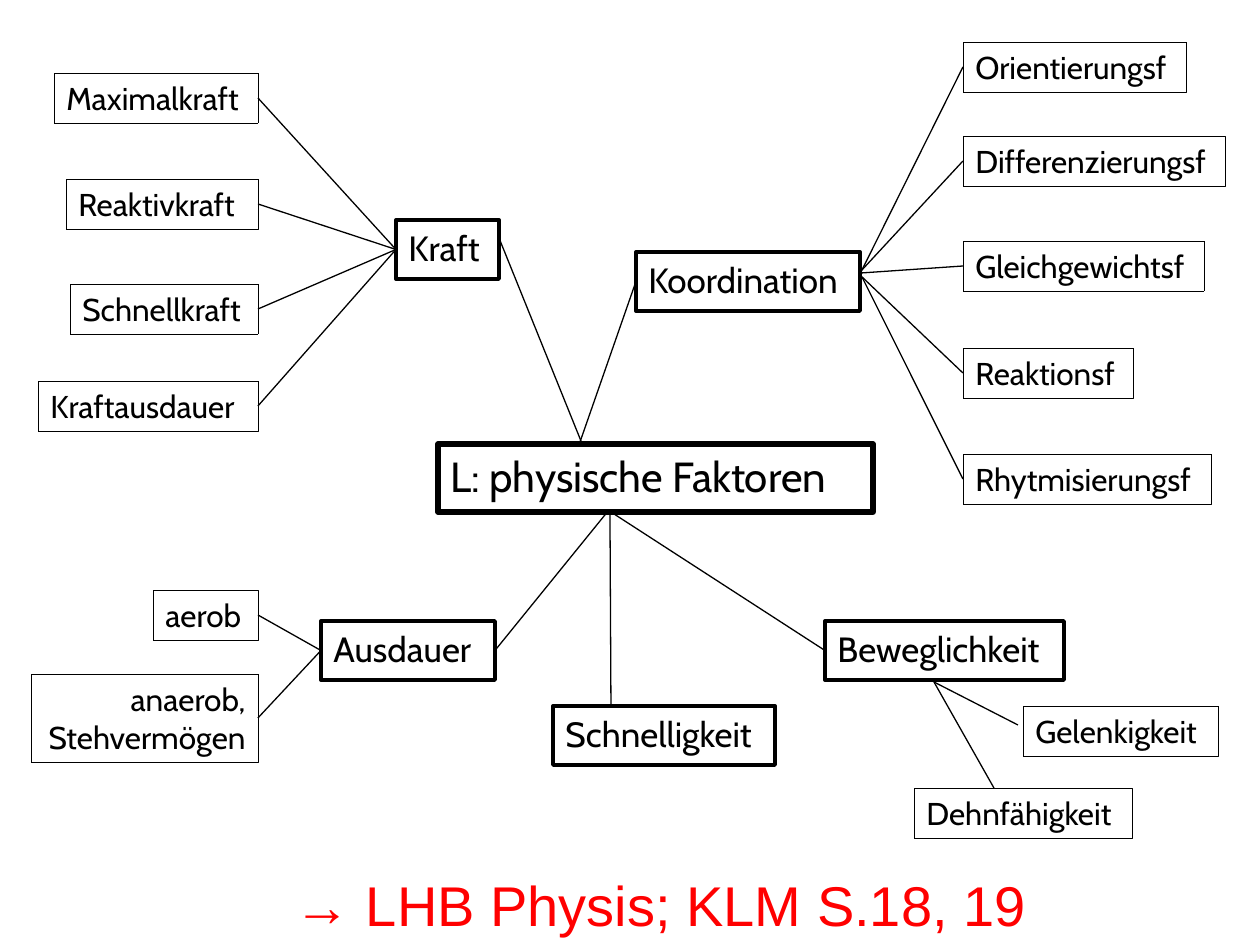
"""Mind map of the physical performance factors in sport."""
import pptx
import pptx.dml.color
import pptx.enum.dml
import pptx.enum.shapes
import pptx.enum.text
import pptx.oxml
import pptx.oxml.ns
import pptx.util

COLORS = {"ink": "000000", "note": "FF0000"}
SCALE = 914400 / 126
TOP, LEFT, BOTTOM, RIGHT = range(4)


def px(length):
    return pptx.util.Emu(round(length * SCALE))


def rgb(name):
    return pptx.dml.color.RGBColor.from_string(COLORS[name])


def write(text_frame, text, size, font="Cabin", color="ink", align="LEFT"):
    text_frame.word_wrap = True
    text_frame.vertical_anchor = pptx.enum.text.MSO_ANCHOR.TOP
    paragraph = text_frame.paragraphs[0]
    paragraph.text = text
    paragraph.alignment = getattr(pptx.enum.text.PP_ALIGN, align)
    for run in paragraph.runs:
        run.font.name = font
        run.font.size = pptx.util.Pt(size)
        run.font.color.rgb = rgb(color)


class MindMap:
    def __init__(self, slide):
        self.slide = slide

    def box(self, text, left, top, width, height=59, size=20, border=2.25, dotted=False, align="LEFT"):
        shape = self.slide.shapes.add_shape(
            pptx.enum.shapes.MSO_SHAPE.RECTANGLE, px(left), px(top), px(width), px(height))
        shape.shadow.inherit = False
        shape.fill.background()
        shape.line.color.rgb = rgb("ink")
        shape.line.width = pptx.util.Pt(border)
        if dotted:
            shape.line.dash_style = pptx.enum.dml.MSO_LINE.ROUND_DOT
        write(shape.text_frame, text, size, align=align)
        return shape

    def leaf(self, text, left, top, width, height=50, align="LEFT"):
        return self.box(text, left, top, width, height, 18, 0.25, True, align)

    def line(self, start, end):
        """Draw a line; each end is a point or a (shape, side) pair."""
        points = [(0, 0) if hasattr(place[0], "shape_id") else place for place in (start, end)]
        connector = self.slide.shapes.add_connector(
            pptx.enum.shapes.MSO_CONNECTOR.STRAIGHT, *(px(value) for point in points for value in point))
        for place, connect in ((start, connector.begin_connect), (end, connector.end_connect)):
            if hasattr(place[0], "shape_id"):
                connect(*place)
        connector.line.color.rgb = rgb("ink")
        connector.line.width = pptx.util.Pt(0.75)
        properties = connector._element.spPr
        properties.append(pptx.oxml.parse_xml(f"<a:effectLst {pptx.oxml.ns.nsdecls('a')}/>"))

    def note(self, text, left, top, width, height):
        shape = self.slide.shapes.add_textbox(px(left), px(top), px(width), px(height))
        write(shape.text_frame, text, 32, font="Arial", color="note")


def main():
    presentation = pptx.Presentation()
    presentation.slide_width = px(1260)
    presentation.slide_height = px(945)
    mind_map = MindMap(presentation.slides.add_slide(presentation.slide_layouts[6]))

    mind_map.box("L: physische Faktoren", 438, 444, 435, 68, size=24, border=3)
    endurance = mind_map.box("Ausdauer", 321, 621, 174)
    strength = mind_map.box("Kraft", 396, 220, 103)
    flexibility = mind_map.box("Beweglichkeit", 825, 621, 239)
    coordination = mind_map.box("Koordination", 636, 252, 224)
    mind_map.box("Schnelligkeit", 553, 706, 222)

    mind_map.line((581, 441), (499, 238))
    mind_map.line((580, 442), (coordination, LEFT))
    mind_map.line((609, 510), (endurance, RIGHT))
    mind_map.line((611, 512), (flexibility, LEFT))
    mind_map.line((610, 512), (611, 704))

    left_leaves = [
        (strength, "Maximalkraft", 73, 204, 50),
        (strength, "Reaktivkraft", 179, 192, 50),
        (strength, "Schnellkraft", 284, 188, 50),
        (strength, "Kraftausdauer", 381, 220, 50),
        (endurance, "aerob", 590, 105, 50),
        (endurance, "anaerob,\vStehvermögen", 674, 227, 88),
    ]
    for parent, text, top, width, height in left_leaves:
        align = "RIGHT" if "\v" in text else "LEFT"
        leaf = mind_map.leaf(text, 258 - width, top, width, height, align)
        mind_map.line((parent, LEFT), (leaf, RIGHT))

    coordination_leaves = [
        ("Orientierungsf", 42, 223, (861, 272)),
        ("Differenzierungsf", 136, 262, (862, 270)),
        ("Gleichgewichtsf", 241, 241, (861, 273)),
        ("Reaktionsf", 348, 170, (861, 276)),
        ("Rhytmisierungsf", 454, 248, (862, 277)),
    ]
    for text, top, width, start in coordination_leaves:
        leaf = mind_map.leaf(text, 963, top, width)
        mind_map.line(start, (leaf, LEFT))

    flexibility_leaves = [
        ("Gelenkigkeit", 1023, 706, 195, (1018, 725)),
        ("Dehnfähigkeit", 914, 788, 218, (994, 788)),
    ]
    for text, left, top, width, end in flexibility_leaves:
        mind_map.leaf(text, left, top, width)
        mind_map.line((934, 682), end)

    mind_map.note("→ LHB Physis; KLM S.18, 19", 282, 864, 764, 81)
    presentation.save("out.pptx")


if __name__ == "__main__":
    main()
